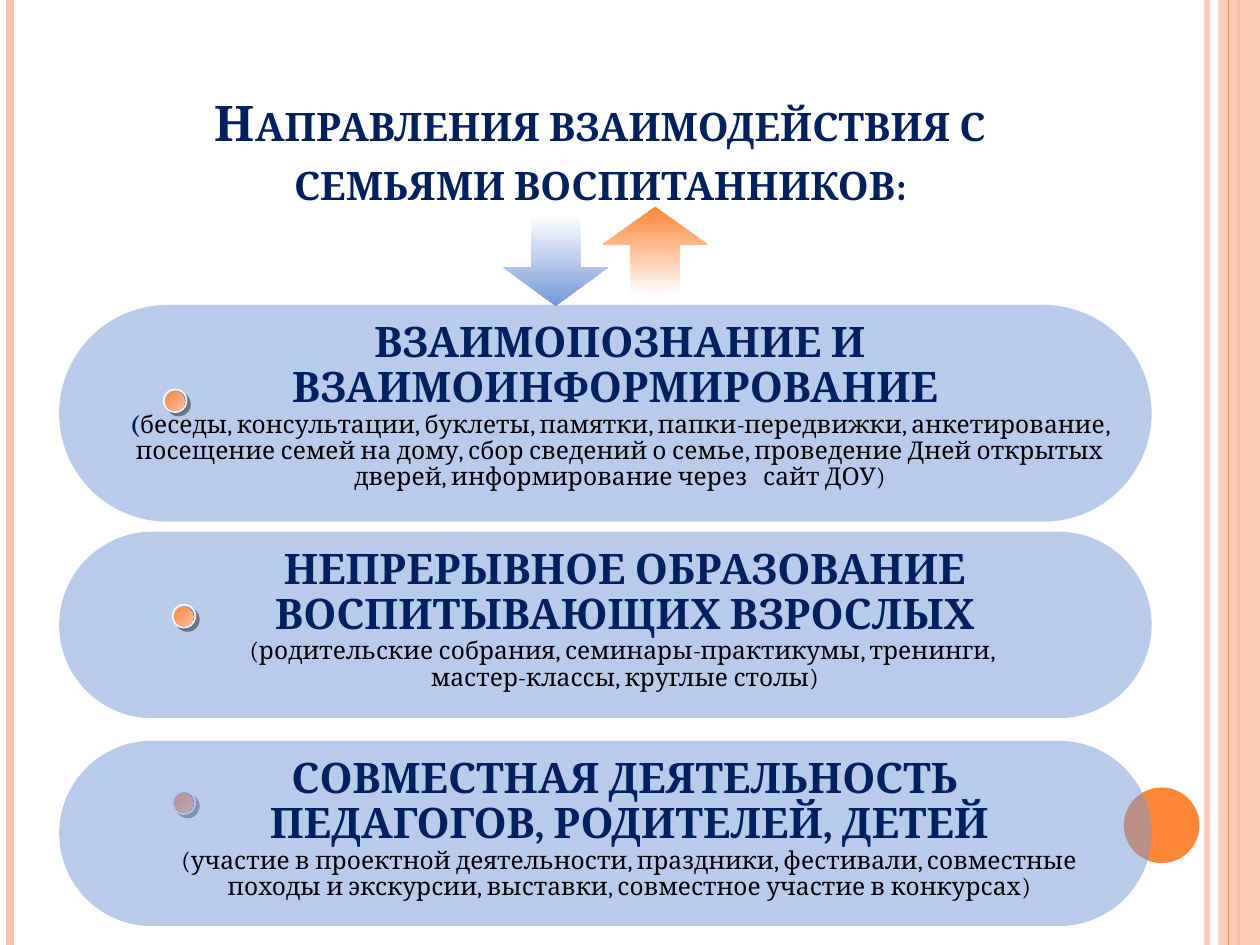
from lxml.etree import SubElement
from pptx import Presentation
from pptx.dml.color import RGBColor
from pptx.enum.shapes import MSO_CONNECTOR as Connector, MSO_SHAPE as Shape
from pptx.enum.text import MSO_ANCHOR as Anchor, MSO_AUTO_SIZE as AutoSize, PP_ALIGN as Align
from pptx.oxml.ns import qn
from pptx.util import Inches, Pt

COLORS = {
    "navy": "002060", "black": "000000", "white": "FFFFFF",
    "blue": "7598D9", "orange": "FE8637", "peach": "FEC3AE",
    "bead_light": "DDDDE1", "bead_dark": "223864", "bead_edge": "F8F8F8",
    "bead_glow": "FEBEA8", "shadow": "1C1C1C",
}


def rgb(name):
    return RGBColor.from_string(COLORS[name])


def set_opacity(shape, percent):
    for color in shape._element.spPr.iter(qn("a:srgbClr")):
        SubElement(color, qn("a:alpha"), val=str(percent * 1000))


class SlideBuilder:
    font = "Cambria"
    heading_size = 24
    detail_size = 14

    def __init__(self, page):
        self.page = page

    def line(self, x, color, width, opacity=None):
        """Draw a vertical line over the full height of the slide."""
        line = self.page.shapes.add_connector(
            Connector.STRAIGHT, Inches(x), 0, Inches(x), Inches(7.5))
        line.line.color.rgb = rgb(color)
        line.line.width = Pt(width)
        if opacity:
            set_opacity(line, opacity)
        SubElement(line._element.spPr, qn("a:effectLst"))

    def shape(self, kind, left, top, width, height, fill=None, opacity=None, parent=None):
        shapes = (parent or self.page).shapes
        shape = shapes.add_shape(kind, Inches(left), Inches(top), Inches(width), Inches(height))
        shape.shadow.inherit = False
        shape.line.fill.background()
        if fill:
            shape.fill.solid()
            shape.fill.fore_color.rgb = rgb(fill)
        if opacity:
            set_opacity(shape, opacity)
        return shape

    def gradient(self, shape, start, end, angle):
        shape.fill.gradient()
        shape.fill.gradient_angle = angle
        for stop, color, position in zip(shape.fill.gradient_stops, (start, end), (0, 1)):
            stop.color.rgb = rgb(color)
            stop.position = position

    def arrow(self, left, top, width, color, rotation):
        arrow = self.shape(Shape.RIGHT_ARROW, left, top, width, 0.83)
        arrow.adjustments[0] = 0.465
        arrow.adjustments[1] = 0.421
        arrow.rotation = rotation
        self.gradient(arrow, "white", color, 0)

    def bead(self, left, top):
        """Draw a small ringed ball with a hard shadow."""
        group = self.page.shapes.add_group_shape()
        ring = self.shape(Shape.OVAL, left, top, 0.18, 0.18, parent=group)
        self.gradient(ring, "bead_light", "bead_dark", 315)
        ring.line.color.rgb = rgb("bead_edge")
        ring.line.width = Pt(1)
        effects = ring._element.spPr.find(qn("a:effectLst"))
        shadow = SubElement(effects, qn("a:outerShdw"), blurRad="0",
                            dist=str(Pt(2.8)), dir="2700000", algn="ctr", rotWithShape="0")
        color = SubElement(shadow, qn("a:srgbClr"), val=COLORS["shadow"])
        SubElement(color, qn("a:alpha"), val="50000")
        ball = self.shape(Shape.OVAL, left + 0.015, top + 0.02, 0.15, 0.15, parent=group)
        self.gradient(ball, "orange", "bead_glow", 315)

    def pill(self, top, height):
        pill = self.shape(Shape.ROUNDED_RECTANGLE, 0.47, top, 8.67, height, "blue", 50)
        pill.adjustments[0] = 0.5

    def span(self, para, text, size, color, bold):
        span = para.add_run()
        span.text = text
        font = span.font
        font.name, font.size, font.bold = self.font, Pt(size), bold
        font.color.rgb = rgb(color)
        return span

    def title(self, text):
        box = self.page.shapes.title
        box.left, box.top, box.width, box.height = map(Inches, (0.86, 0.47, 7.81, 1.25))
        frame = box.text_frame
        frame.word_wrap = True
        frame.auto_size = AutoSize.NONE
        frame.vertical_anchor = Anchor.BOTTOM
        para = frame.paragraphs[0]
        para.alignment = Align.CENTER
        span = self.span(para, text, 28, "navy", True)
        span._r.get_or_add_rPr().set("cap", "small")

    def text(self, left, top, width, height, headings, details, opening=""):
        """Write bold headings, then details after an optional bold opening mark."""
        box = self.page.shapes.add_textbox(
            Inches(left), Inches(top), Inches(width), Inches(height))
        frame = box.text_frame
        frame.word_wrap = True
        frame.auto_size = AutoSize.SHAPE_TO_FIT_TEXT
        for index, line in enumerate(headings + details):
            para = frame.add_paragraph() if index else frame.paragraphs[0]
            para.alignment = Align.CENTER
            para.line_spacing = 0.9
            if index < len(headings):
                self.span(para, line, self.heading_size, "navy", True)
                continue
            if opening and index == len(headings):
                self.span(para, opening, self.detail_size, "navy", True)
            self.span(para, line, self.detail_size, "black", False)


def main():
    deck = Presentation()
    deck.slide_width, deck.slide_height = Inches(10), Inches(7.5)
    page = deck.slides.add_slide(deck.slide_layouts[5])
    builder = SlideBuilder(page)

    builder.line(9.58, "peach", 3, 93)
    builder.line(0.08, "peach", 4.5)
    builder.line(9.83, "orange", 1.5)
    builder.shape(Shape.RECTANGLE, 9.67, 0, 0.33, 7.5, "peach", 87)
    builder.line(9.75, "orange", 0.75)
    builder.shape(Shape.OVAL, 8.92, 6.25, 0.6, 0.6, "orange")

    builder.title("Направления взаимодействия с семьями воспитанников:")
    builder.arrow(4.05, 1.65, 0.72, "blue", 90)
    builder.bead(1.37, 6.28)
    for top, height in ((2.42, 1.72), (4.22, 1.48), (5.88, 1.47)):
        builder.pill(top, height)
    builder.arrow(4.85, 1.58, 0.7, "orange", 270)

    builder.text(
        0.78, 2.5, 8.28, 1.46,
        ["ВЗАИМОПОЗНАНИЕ И ВЗАИМОИНФОРМИРОВАНИЕ "],
        ["беседы, консультации, буклеты, памятки, папки-передвижки, анкетирование, "
         "посещение семей на дому, сбор сведений о семье, проведение Дней открытых "
         "дверей, информирование через   сайт ДОУ)"],
        opening="(")
    builder.text(
        1.33, 4.3, 7.26, 1.25,
        ["НЕПРЕРЫВНОЕ ОБРАЗОВАНИЕ ВОСПИТЫВАЮЩИХ ВЗРОСЛЫХ"],
        ["(родительские собрания, семинары-практикумы, тренинги, ",
         "мастер-классы, круглые столы)"])
    builder.text(
        1.09, 5.96, 7.81, 1.25,
        ["СОВМЕСТНАЯ ДЕЯТЕЛЬНОСТЬ ", "ПЕДАГОГОВ, РОДИТЕЛЕЙ, ДЕТЕЙ"],
        ["(участие в проектной деятельности, праздники, фестивали, совместные "
         "походы и экскурсии, выставки, совместное участие в конкурсах)"])
    builder.bead(1.37, 4.8)
    builder.bead(1.3, 3.09)

    deck.save("out.pptx")


if __name__ == "__main__":
    main()
